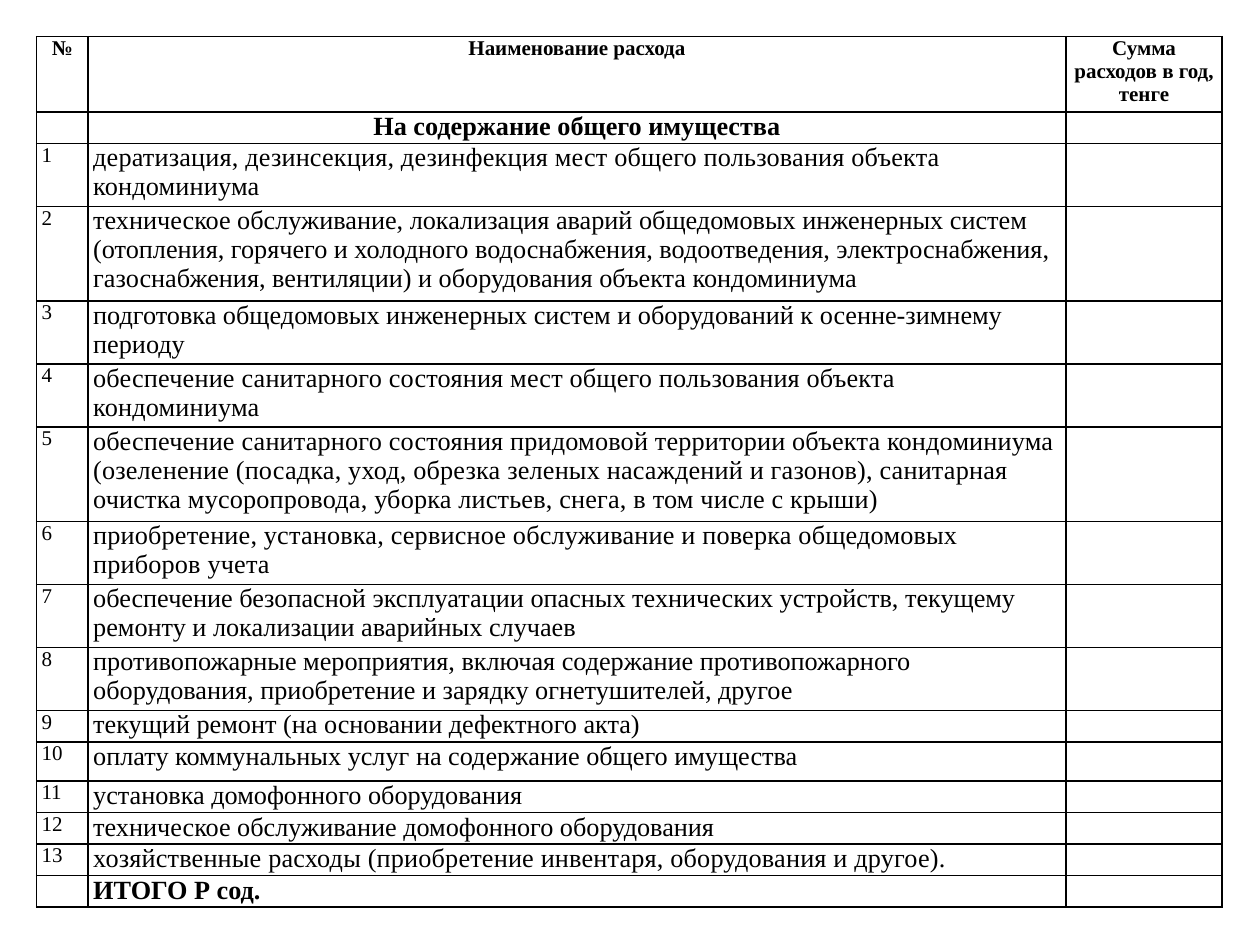
from lxml.etree import SubElement
from pptx import Presentation
from pptx.dml.color import RGBColor
from pptx.enum.text import PP_ALIGN as Align
from pptx.oxml.ns import qn
from pptx.util import Inches, Pt

FONT = "Times New Roman"
BLACK = "000000"
COLUMN_WIDTHS = [0.41, 7.76, 1.24]
HEADINGS = ["№", "Наименование расхода", "Сумма расходов в год, тенге"]
SECTION = "На содержание общего имущества"
TOTAL = "ИТОГО Р сод."
EXPENSES = [
    ("дератизация, дезинсекция, дезинфекция мест общего пользования объекта кондоминиума", 0.5, True),
    ("техническое обслуживание, локализация аварий общедомовых инженерных систем "
     "(отопления, горячего и холодного водоснабжения, водоотведения, электроснабжения, "
     "газоснабжения, вентиляции) и оборудования объекта кондоминиума", 0.75, False),
    ("подготовка общедомовых инженерных систем и оборудований к осенне-зимнему периоду", 0.5, False),
    ("обеспечение санитарного состояния мест общего пользования объекта кондоминиума", 0.5, True),
    ("обеспечение санитарного состояния придомовой территории объекта кондоминиума "
     "(озеленение (посадка, уход, обрезка зеленых насаждений и газонов), санитарная "
     "очистка мусоропровода, уборка листьев, снега, в том числе с крыши)", 0.75, True),
    ("приобретение, установка, сервисное обслуживание и поверка общедомовых приборов учета", 0.5, True),
    ("обеспечение безопасной эксплуатации опасных технических устройств, текущему "
     "ремонту и локализации аварийных случаев", 0.5, False),
    ("противопожарные мероприятия, включая содержание противопожарного "
     "оборудования, приобретение и зарядку огнетушителей, другое", 0.5, False),
    ("текущий ремонт (на основании дефектного акта)", 0.25, False),
    ("оплату коммунальных услуг на содержание общего имущества", 0.31, False),
    ("установка домофонного оборудования", 0.25, False),
    ("техническое обслуживание домофонного оборудования", 0.25, False),
    ("хозяйственные расходы (приобретение инвентаря, оборудования и другое).", 0.25, True),
]


def color(value):
    return RGBColor.from_string(value)


def add_borders(cell):
    properties = cell._tc.get_or_add_tcPr()
    for side in ("lnL", "lnR", "lnT", "lnB"):
        line = SubElement(properties, qn(f"a:{side}"), w=str(Pt(1)))
        fill = SubElement(line, qn("a:solidFill"))
        SubElement(fill, qn("a:srgbClr"), val=BLACK)


def write_cell(cell, text="", size=12, bold=False, align=Align.LEFT, spaced=False):
    cell.margin_left = cell.margin_right = Inches(0.04)
    cell.margin_top = cell.margin_bottom = 0
    add_borders(cell)
    cell.fill.background()
    paragraph = cell.text_frame.paragraphs[0]
    paragraph.alignment = align
    font = paragraph.font
    font.name, font.size, font.bold = FONT, Pt(size), bold
    font.color.rgb = color(BLACK)
    if text:
        run = paragraph.add_run()
        run.text = text
        if spaced:
            run._r.get_or_add_rPr().set("spc", "10")


def add_expense_table(slide, left, top, width, height):
    row_heights = [0.6, 0.25] + [expense[1] for expense in EXPENSES] + [0.25]
    table = slide.shapes.add_table(
        len(row_heights), len(COLUMN_WIDTHS), left, top, width, height).table
    table.first_row = table.horz_banding = False
    for column, column_width in zip(table.columns, COLUMN_WIDTHS):
        column.width = Inches(column_width)
    for row, row_height in zip(table.rows, row_heights):
        row.height = Inches(row_height)

    for column, heading in enumerate(HEADINGS):
        write_cell(table.cell(0, column), heading, bold=True, align=Align.CENTER)
    write_cell(table.cell(1, 0))
    write_cell(table.cell(1, 1), SECTION, 15, True, Align.CENTER)
    for number, (name, _, spaced) in enumerate(EXPENSES, 1):
        write_cell(table.cell(number + 1, 0), str(number))
        write_cell(table.cell(number + 1, 1), name, 15, spaced=spaced)
    last = len(row_heights) - 1
    write_cell(table.cell(last, 0))
    write_cell(table.cell(last, 1), TOTAL, 15, True)
    for row in range(1, len(row_heights)):
        write_cell(table.cell(row, 2))


def main():
    presentation = Presentation()
    presentation.slide_width, presentation.slide_height = Inches(10), Inches(7.5)
    slide = presentation.slides.add_slide(presentation.slide_layouts[6])
    add_expense_table(slide, Inches(0.29), Inches(0.29), Inches(9.41), Inches(6.91))
    presentation.save("out.pptx")


if __name__ == "__main__":
    main()
